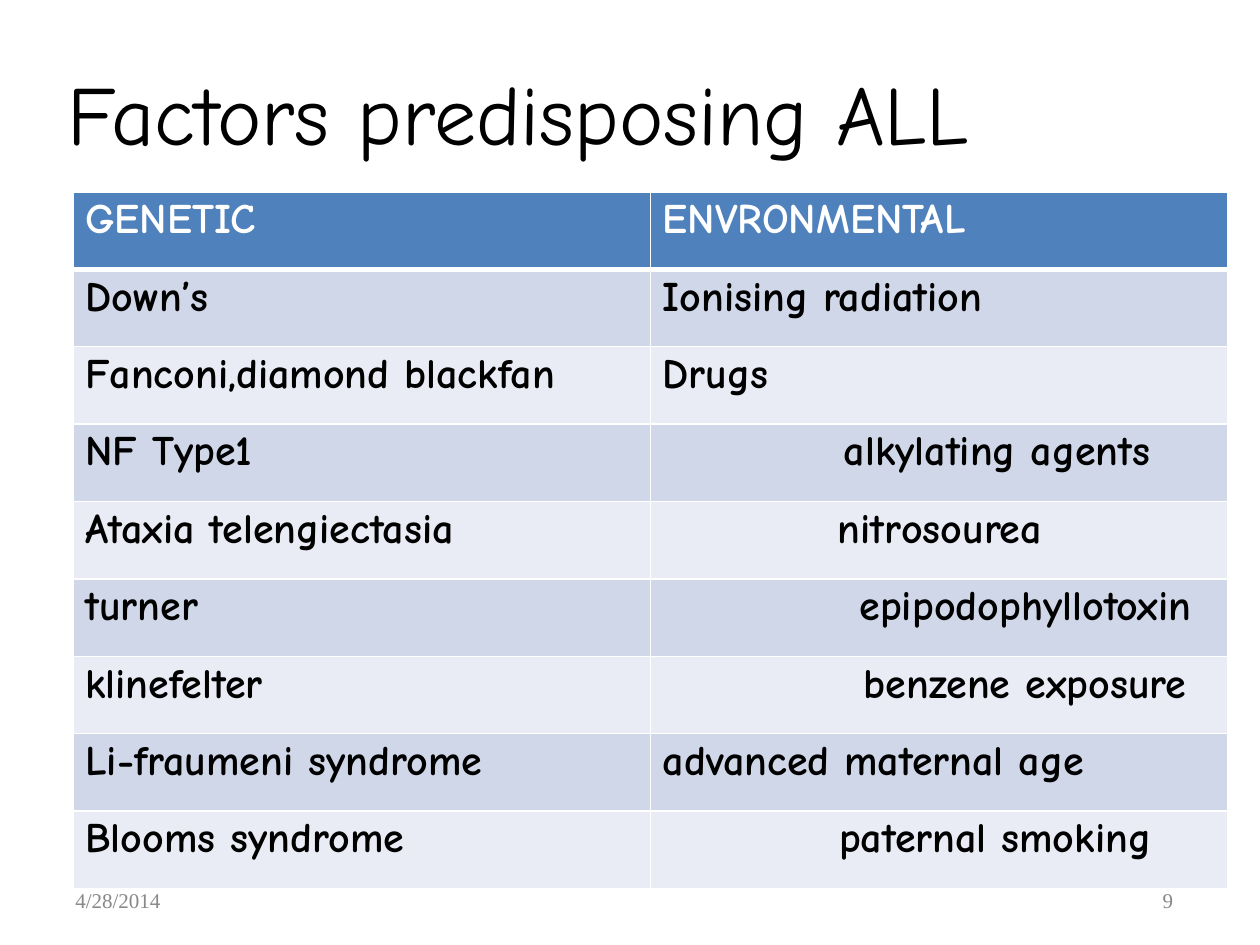
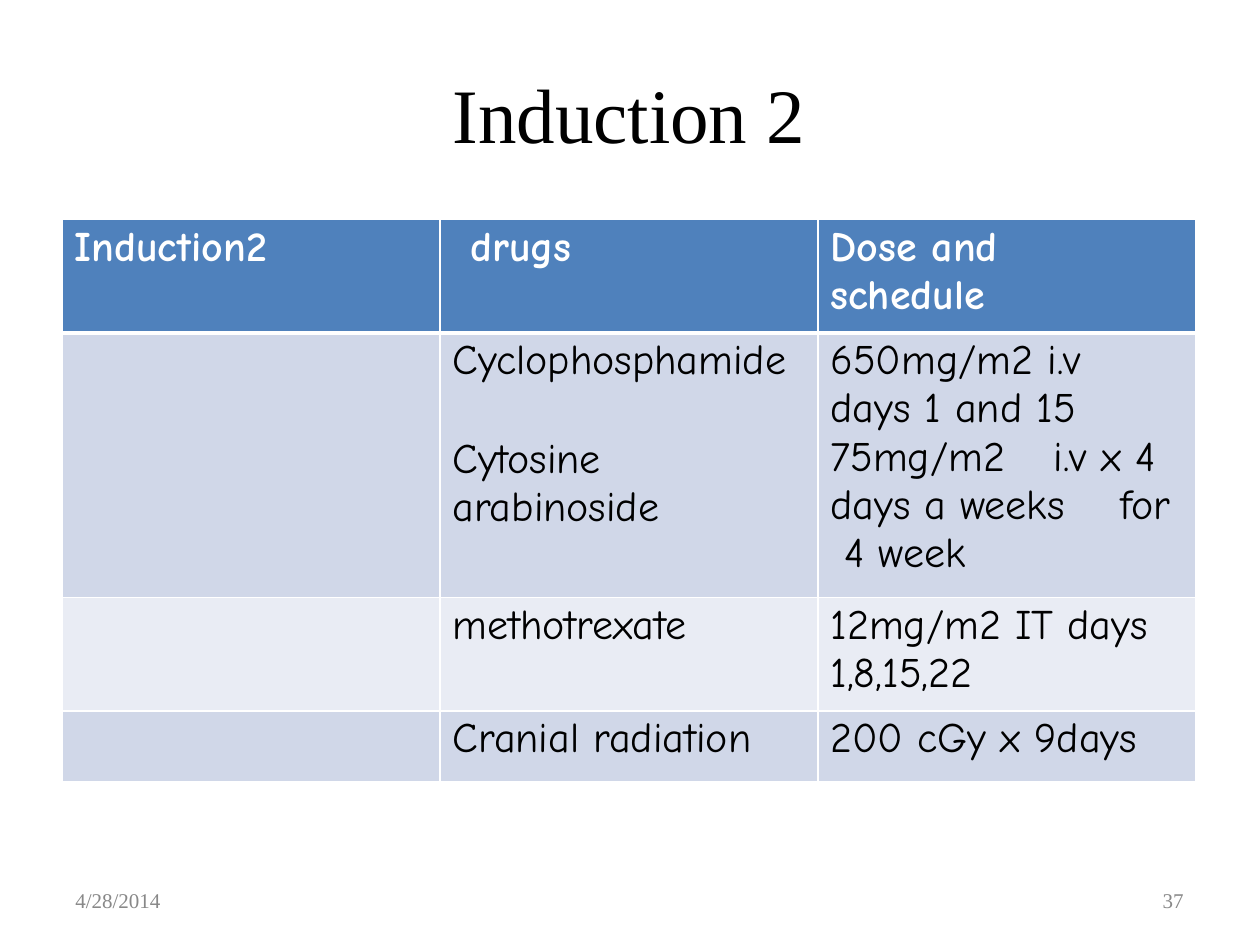
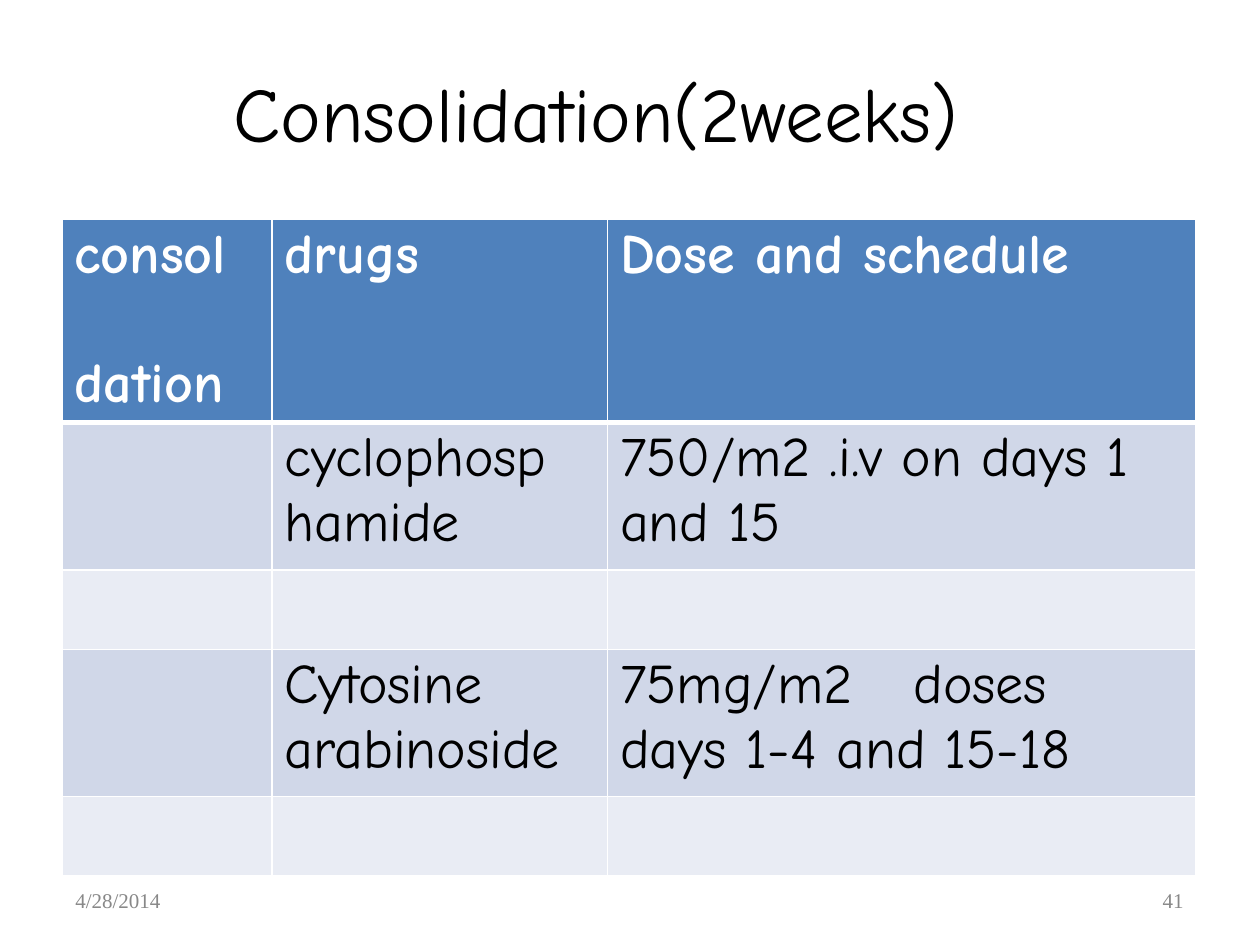
from lxml.etree import SubElement
from pptx import Presentation
from pptx.dml.color import RGBColor
from pptx.enum.text import MSO_ANCHOR, MSO_AUTO_SIZE, PP_ALIGN
from pptx.oxml.ns import qn
from pptx.util import Cm, Pt

HEAD = RGBColor(0x4F, 0x81, 0xBC)
BANDS = RGBColor(0xD0, 0xD7, 0xE8), RGBColor(0xE9, 0xEC, 0xF4)
WHITE = RGBColor(0xFF, 0xFF, 0xFF)
BLACK = RGBColor(0, 0, 0)
GREY = RGBColor(0x88, 0x88, 0x88)
COMIC, TIMES = "Comic Neue", "Times New Roman"

DATE = "4/28/2014"
PAD = 0.25      # usual left inset of a cell, cm
FOOT_TOP = 17.91

# Content: a list in a cell holds paragraphs; "tweaks" are keyed by (row, column)
SLIDES = [
    {
        "title": "Factors predisposing ALL",
        "title_box": (1.37, 1.24, 20.12, 2.11),
        "title_font": {"name": COMIC, "size": Pt(48)},
        "number": "9",
        "corner": (1.47, 3.87),
        "cols": [11.64] * 2,
        "heights": [1.56] * 9,
        "size": 24, "before": 2.4, "bold": True,
        "rows": [
            ("GENETIC", "ENVRONMENTAL"),
            ("Down’s", "Ionising radiation"),
            ("Fanconi,diamond blackfan", "Drugs"),
            ("NF Type1", "alkylating agents"),
            ("Ataxia telengiectasia", "nitrosourea"),
            ("turner", "epipodophyllotoxin"),
            ("klinefelter", "benzene exposure"),
            ("Li-fraumeni syndrome", "advanced maternal age"),
            ("Blooms syndrome", "paternal smoking"),
        ],
        "tweaks": {
            (3, 1): {"align": PP_ALIGN.CENTER, "left": 2.34},
            (4, 1): {"align": PP_ALIGN.CENTER, "left": 0.03},
            (5, 1): {"align": PP_ALIGN.RIGHT, "right": 0.74},
            (6, 1): {"align": PP_ALIGN.RIGHT, "right": 0.84},
            (8, 1): {"align": PP_ALIGN.CENTER, "left": 2.26},
        },
    },
    {
        "title": "Induction 2",
        "title_box": (9.12, 1.35, 7.19, 1.93),
        "title_font": {"name": TIMES, "size": Pt(44)},
        "number": "37",
        "corner": (1.25, 4.42),
        "cols": [7.62] * 3,
        "heights": [2.29, 5.33, 2.29, 1.42],
        "size": 24, "before": 2.4, "bold": False,
        "rows": [
            ("Induction2", "drugs", "Dose and\nschedule"),
            ("", ["Cyclophosphamide", "Cytosine\narabinoside"],
             "650mg/m2 i.v\ndays 1 and 15\n75mg/m2\ti.v x 4\n"
             "days a weeks\tfor\n 4 week"),
            ("", "methotrexate", "12mg/m2 IT days\n1,8,15,22"),
            ("", "Cranial radiation", "200 cGy x 9days"),
        ],
        "tweaks": {
            (0, 1): {"left": 0.61},
            (1, 1): {"gap": 28.8},
            (1, 2): {"tabs": (4.5, 5.84)},
        },
    },
    {
        "title": "Consolidation(2weeks)",
        "title_box": (4.7, 1.33, 16.05, 1.93),
        "title_font": {"name": COMIC, "size": Pt(44)},
        "number": "41",
        "corner": (1.25, 4.42),
        "cols": [4.23, 6.77, 11.85],
        "heights": [4.1, 2.97, 1.6, 2.97, 1.6],
        "size": 32, "before": 2, "bold": False,
        "rows": [
            (["consol", "dation"], "drugs", "Dose and schedule"),
            ("", "cyclophosp\nhamide", "750/m2 .i.v on days 1\nand 15"),
            ("", "", ""),
            ("", "Cytosine\narabinoside",
             "75mg/m2\tdoses\ndays 1-4 and 15-18"),
            ("", "", ""),
        ],
        "tweaks": {
            (0, 0): {"gap": 37},
            (3, 2): {"tabs": (5.92,)},
        },
    },
]


def style(para, **form):
    color = form.pop("color")
    for run in para.runs:
        for key, val in form.items():
            setattr(run.font, key, val)
        run.font.color.rgb = color


def trim(frame):
    """Remove the insets and anchor the text at the top."""
    for side in ("left", "top", "right", "bottom"):
        setattr(frame, f"margin_{side}", 0)
    frame.vertical_anchor = MSO_ANCHOR.TOP
    frame.auto_size = MSO_AUTO_SIZE.NONE
    frame.word_wrap = False


def add_title(slide, data):
    shape = slide.shapes.title
    box = map(Cm, data["title_box"])
    for key, val in zip(("left", "top", "width", "height"), box):
        setattr(shape, key, val)
    trim(shape.text_frame)
    para = shape.text_frame.paragraphs[0]
    para.text = data["title"]
    para.alignment = PP_ALIGN.LEFT
    style(para, color=BLACK, **data["title_font"])


def add_foot(slide, text, left, width):
    box = slide.shapes.add_textbox(Cm(left), Cm(FOOT_TOP), Cm(width), Cm(0.53))
    trim(box.text_frame)
    para = box.text_frame.paragraphs[0]
    para.text = text
    para.line_spacing = Pt(14.1)
    style(para, name=TIMES, size=Pt(12), color=GREY)


def add_edges(cell, top, bottom):
    props = cell._tc.get_or_add_tcPr()
    for tag, wide in (("lnL", 1), ("lnR", 1), ("lnT", top), ("lnB", bottom)):
        line = SubElement(props, qn(f"a:{tag}"), w=str(Pt(wide)))
        fill = SubElement(line, qn("a:solidFill"))
        SubElement(fill, qn("a:srgbClr"), val=str(WHITE))


def add_tabs(para, stops):
    tabs = SubElement(para._p.get_or_add_pPr(), qn("a:tabLst"))
    for stop in stops:
        SubElement(tabs, qn("a:tab"), pos=str(Cm(stop)), algn="l")


def fill_cell(cell, text, row, data, tweak):
    add_edges(cell, 3 if row == 1 else 1, 3 if row == 0 else 1)
    cell.fill.solid()
    cell.fill.fore_color.rgb = BANDS[(row - 1) % 2] if row else HEAD
    cell.margin_left = Cm(tweak.get("left", PAD))
    cell.margin_right = Cm(tweak.get("right", 0))
    cell.margin_top, cell.margin_bottom = Cm(0.08), 0
    if not text:
        return
    frame = cell.text_frame
    parts = text if isinstance(text, list) else [text]
    for num, part in enumerate(parts):
        para = frame.add_paragraph() if num else frame.paragraphs[0]
        para.text = part
        para.alignment = tweak.get("align", PP_ALIGN.LEFT)
        para.space_before = Pt(tweak["gap"] if num else data["before"])
        if "tabs" in tweak:
            add_tabs(para, tweak["tabs"])
        style(para, name=COMIC, size=Pt(data["size"]),
              bold=row == 0 or data["bold"], color=BLACK if row else WHITE)


def add_grid(slide, data):
    rows, cols, highs = data["rows"], data["cols"], data["heights"]
    left, top = data["corner"]
    table = slide.shapes.add_table(
        len(rows), len(cols), Cm(left), Cm(top),
        Cm(sum(cols)), Cm(sum(highs))).table
    table.first_row = table.horz_banding = False
    for col, wide in zip(table.columns, cols):
        col.width = Cm(wide)
    for row, high in zip(table.rows, highs):
        row.height = Cm(high)
    for r, texts in enumerate(rows):
        for c, text in enumerate(texts):
            fill_cell(table.cell(r, c), text, r, data,
                      data["tweaks"].get((r, c), {}))


def main():
    deck = Presentation()
    deck.slide_width, deck.slide_height = Cm(25.4), Cm(19.05)
    for data in SLIDES:
        slide = deck.slides.add_slide(deck.slide_layouts[5])
        add_foot(slide, DATE, 1.52, 1.78)
        add_foot(slide, data["number"], 23.44, 0.66)
        add_title(slide, data)
        add_grid(slide, data)
    deck.save("out.pptx")


if __name__ == "__main__":
    main()
